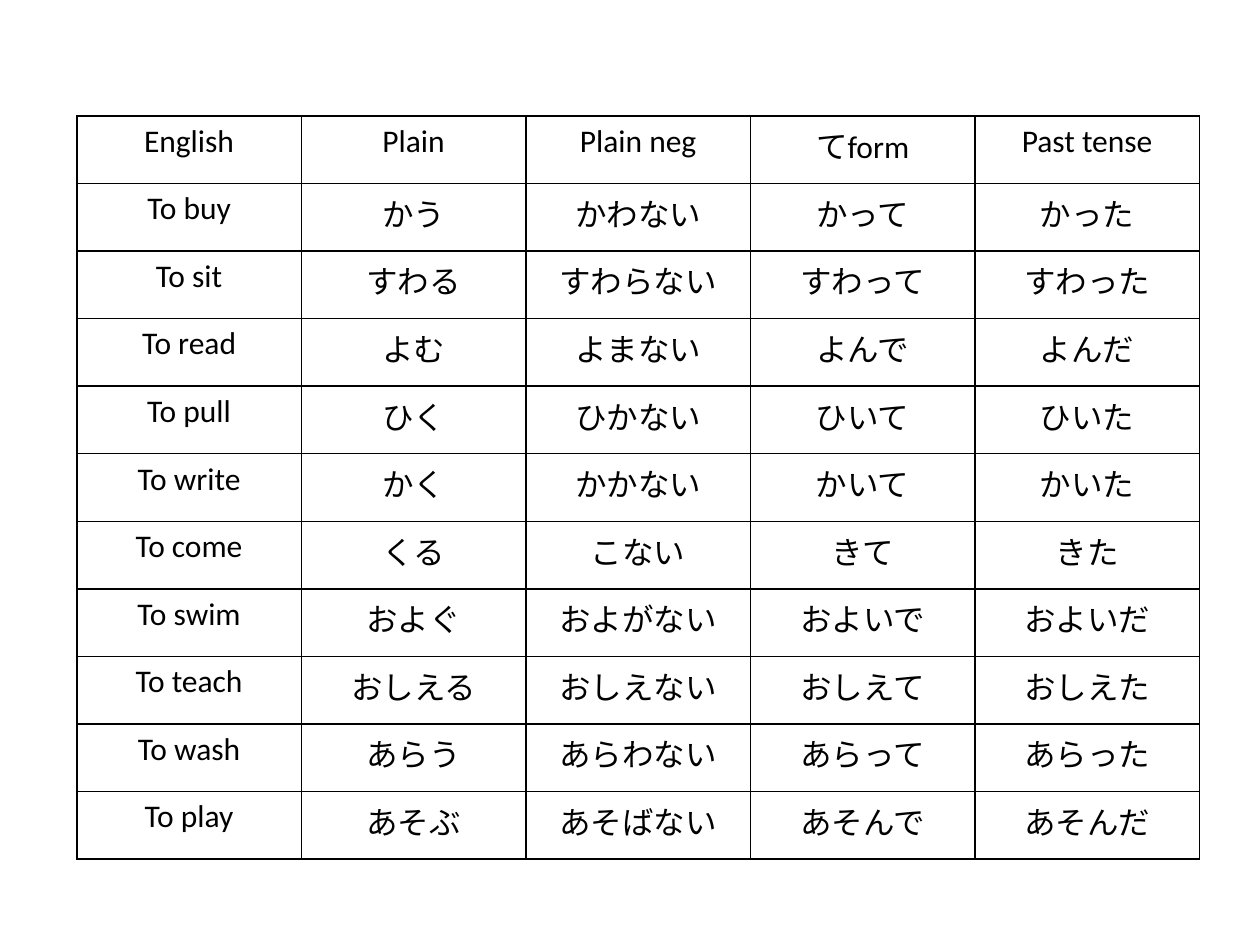
from lxml.etree import SubElement
from pptx import Presentation
from pptx.dml.color import RGBColor
from pptx.enum.text import PP_ALIGN
from pptx.oxml.ns import qn
from pptx.util import Inches, Pt

BLACK = "000000"
VERBS = [
    ("English", "Plain", "Plain neg", "てform", "Past tense"),
    ("To buy", "かう", "かわない", "かって", "かった"),
    ("To sit", "すわる", "すわらない", "すわって", "すわった"),
    ("To read", "よむ", "よまない", "よんで", "よんだ"),
    ("To pull", "ひく", "ひかない", "ひいて", "ひいた"),
    ("To write", "かく", "かかない", "かいて", "かいた"),
    ("To come", "くる", "こない", "きて", "きた"),
    ("To swim", "およぐ", "およがない", "およいで", "およいだ"),
    ("To teach", "おしえる", "おしえない", "おしえて", "おしえた"),
    ("To wash", "あらう", "あらわない", "あらって", "あらった"),
    ("To play", "あそぶ", "あそばない", "あそんで", "あそんだ"),
]


def color(code):
    return RGBColor.from_string(code)


def add_borders(cell, code, width):
    props = cell._tc.get_or_add_tcPr()
    for side in ("lnL", "lnR", "lnT", "lnB"):
        line = SubElement(props, qn(f"a:{side}"), w=str(Pt(width)))
        fill = SubElement(line, qn("a:solidFill"))
        SubElement(fill, qn("a:srgbClr"), val=code)


def fill_cell(cell, text):
    # Borders come before the fill in the cell properties
    add_borders(cell, BLACK, 1)
    cell.fill.background()
    cell.text = text
    para = cell.text_frame.paragraphs[0]
    para.alignment = PP_ALIGN.CENTER
    para.font.name = "Calibri"
    para.font.size = Pt(18)
    para.font.color.rgb = color(BLACK)


def add_verbs(slide, left, top, width, height):
    rows, cols = len(VERBS), len(VERBS[0])
    table = slide.shapes.add_table(rows, cols, left, top, width, height).table
    table.first_row = table.horz_banding = False
    # Equal columns and rows
    for col in table.columns:
        col.width = int(width / cols)
    for row, words in zip(table.rows, VERBS):
        row.height = int(height / rows)
        for cell, word in zip(row.cells, words):
            fill_cell(cell, word)


def main():
    deck = Presentation()
    deck.slide_width, deck.slide_height = Inches(10), Inches(7.5)
    slide = deck.slides.add_slide(deck.slide_layouts[6])
    # Verb form table
    add_verbs(slide, Inches(0.61), Inches(0.92), Inches(8.91), Inches(5.9))
    deck.save("out.pptx")


if __name__ == "__main__":
    main()
